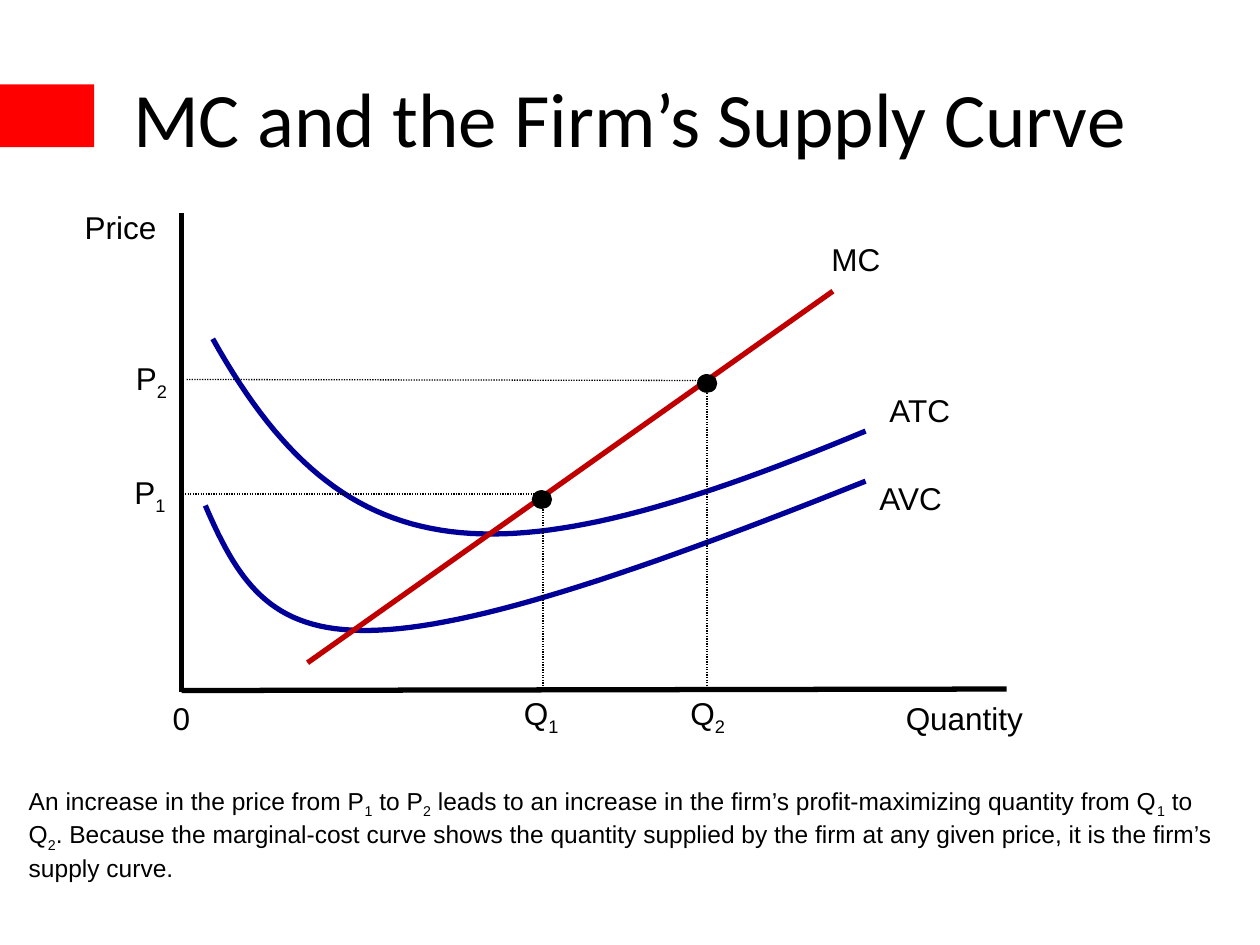
from dataclasses import dataclass

from lxml.etree import SubElement
from pptx import Presentation
from pptx.dml.color import RGBColor
from pptx.enum.dml import MSO_LINE
from pptx.enum.shapes import MSO_CONNECTOR, MSO_SHAPE
from pptx.enum.text import MSO_ANCHOR, MSO_AUTO_SIZE, PP_ALIGN
from pptx.oxml.ns import qn
from pptx.util import Cm, Pt

BLACK, RED, BLUE, CRIMSON = "000000", "FF0000", "000099", "C00000"
LABEL_HEIGHT = 1.02
CURVE_STEPS = 60


@dataclass
class Label:
    text: str  # an underscore makes the next character a subscript
    left: float
    top: float
    width: float
    height: float = LABEL_HEIGHT
    size: int = 18
    align: PP_ALIGN = PP_ALIGN.LEFT
    wrap: bool = False


@dataclass
class Line:
    start: tuple[float, float]
    end: tuple[float, float]
    color: str = BLACK
    width: float = 3
    dotted: bool = False


@dataclass
class Curve:
    """Cubic curve given by its end points and two control points."""
    points: tuple[tuple[float, float], ...]
    color: str = BLUE

    def at(self, t: float) -> tuple[int, int]:
        weights = ((1 - t) ** 3, 3 * t * (1 - t) ** 2, 3 * t ** 2 * (1 - t), t ** 3)
        x, y = (sum(w * p[axis] for w, p in zip(weights, self.points)) for axis in (0, 1))
        return Cm(x), Cm(y)


def rgb(color: str) -> RGBColor:
    return RGBColor.from_string(color)


def draw_label(slide, label: Label) -> None:
    box = slide.shapes.add_textbox(Cm(label.left), Cm(label.top), Cm(label.width), Cm(label.height))
    text_frame = box.text_frame
    text_frame.word_wrap = label.wrap
    text_frame.auto_size = MSO_AUTO_SIZE.SHAPE_TO_FIT_TEXT
    paragraph = text_frame.paragraphs[0]
    paragraph.alignment = label.align
    first, *rest = label.text.split("_")
    pieces = [(first, False)]
    for part in rest:
        pieces += [(part[0], True), (part[1:], False)]
    for text, subscript in pieces:
        if not text:
            continue
        run = paragraph.add_run()
        run.text = text
        run.font.name = "Arial"
        run.font.size = Pt(label.size)
        run.font.color.rgb = rgb(BLACK)
        if subscript:
            run._r.get_or_add_rPr().set("baseline", "-25000")


def draw_line(slide, line: Line) -> None:
    ends = [Cm(value) for value in (*line.start, *line.end)]
    connector = slide.shapes.add_connector(MSO_CONNECTOR.STRAIGHT, *ends)
    connector.line.color.rgb = rgb(line.color)
    connector.line.width = Pt(line.width)
    if line.dotted:
        connector.line.dash_style = MSO_LINE.ROUND_DOT
    SubElement(connector._element.spPr, qn("a:effectLst"))


def draw_curve(slide, curve: Curve) -> None:
    points = [curve.at(step / CURVE_STEPS) for step in range(CURVE_STEPS + 1)]
    builder = slide.shapes.build_freeform(*points[0])
    builder.add_line_segments(points[1:], close=False)
    shape = builder.convert_to_shape()
    shape.shadow.inherit = False
    shape.fill.background()
    shape.line.color.rgb = rgb(curve.color)
    shape.line.width = Pt(3)


def draw_solid(slide, kind: MSO_SHAPE, left: float, top: float,
               width: float, height: float, color: str) -> None:
    shape = slide.shapes.add_shape(kind, Cm(left), Cm(top), Cm(width), Cm(height))
    shape.shadow.inherit = False
    shape.fill.solid()
    shape.fill.fore_color.rgb = rgb(color)
    shape.line.fill.background()


def draw_title(slide, text: str) -> None:
    title = slide.shapes.title
    title.left, title.top, title.width, title.height = Cm(1.27), Cm(0.76), Cm(22.86), Cm(3.18)
    title.text_frame.text = text
    title.text_frame.vertical_anchor = MSO_ANCHOR.MIDDLE
    paragraph = title.text_frame.paragraphs[0]
    paragraph.alignment = PP_ALIGN.CENTER
    font = paragraph.runs[0].font
    font.name, font.size = "Calibri", Pt(44)
    font.color.rgb = rgb(BLACK)


CAPTION = ("An increase in the price from P_1 to P_2 leads to an increase in the firm’s "
           "profit-maximizing quantity from Q_1 to Q_2. Because the marginal-cost curve shows "
           "the quantity supplied by the firm at any given price, it is the firm’s supply curve.")

LABELS = [
    Label("Price ", 1.42, 4.06, 2.16, align=PP_ALIGN.RIGHT),
    Label("Quantity", 18.01, 13.97, 3.07),
    Label("0", 3.23, 13.97, 0.86),
    Label("ATC", 17.68, 7.75, 1.75),
    Label("AVC", 17.48, 9.53, 1.78),
    Label("MC", 16.51, 4.72, 1.5),
    Label("P_1", 2.46, 9.42, 1.17),
    Label("P_2", 2.49, 7.11, 1.17),
    Label("Q_1", 10.31, 13.87, 1.24),
    Label("Q_2", 13.67, 13.87, 1.24),
    Label(CAPTION, 0.33, 15.72, 24.71, 2.06, size=14, wrap=True),
]

AXES = [
    Line((3.66, 4.29), (3.66, 13.94)),
    Line((3.66, 13.92), (20.29, 13.89)),
]

COST_CURVES = [
    Curve(((4.29, 6.83), (6.96, 11.61), (10.01, 11.79), (17.45, 8.69))),  # ATC
    Curve(((4.14, 10.19), (5.46, 13.26), (6.71, 14.0), (17.45, 9.7))),  # AVC
]

MARGINAL_COST = Line((6.2, 13.36), (16.79, 5.87), CRIMSON)

GUIDES = [
    Line(start, end, width=0.75, dotted=True)
    for start, end in (
        ((3.73, 9.96), (10.95, 9.96)),
        ((3.76, 7.65), (14.27, 7.67)),
        ((10.95, 10.01), (10.95, 13.94)),
        ((14.25, 7.77), (14.25, 13.92)),
    )
]

SUPPLY_POINTS = [(14.05, 7.54), (10.72, 9.88)]


def main() -> None:
    presentation = Presentation()
    presentation.slide_width, presentation.slide_height = Cm(25.4), Cm(19.05)
    slide = presentation.slides.add_slide(presentation.slide_layouts[5])

    # Title and its red marker
    draw_title(slide, "MC and the Firm’s Supply Curve")
    draw_solid(slide, MSO_SHAPE.RECTANGLE, 0, 1.7, 1.9, 1.27, RED)

    # Axes, cost curves and guides
    for axis in AXES:
        draw_line(slide, axis)
    for curve in COST_CURVES:
        draw_curve(slide, curve)
    for line in (MARGINAL_COST, *GUIDES):
        draw_line(slide, line)

    # Points on the supply curve
    for left, top in SUPPLY_POINTS:
        draw_solid(slide, MSO_SHAPE.OVAL, left, top, 0.41, 0.38, BLACK)

    # Labels and caption
    for label in LABELS:
        draw_label(slide, label)

    presentation.save("out.pptx")


if __name__ == "__main__":
    main()
